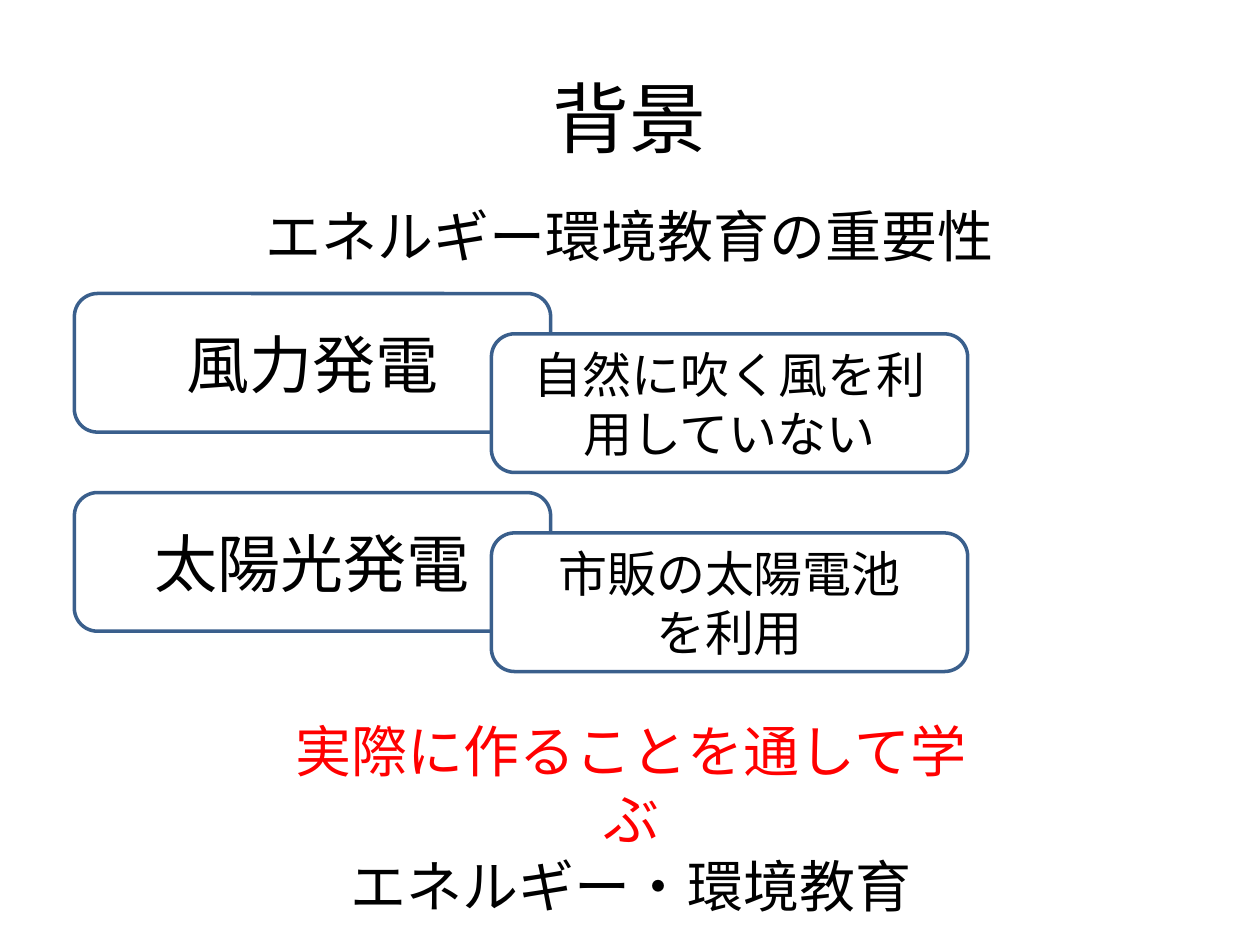
import pptx
import pptx.dml.color
import pptx.enum.shapes
import pptx.enum.text
import pptx.util

Inches = pptx.util.Inches
Pt = pptx.util.Pt
Color = pptx.dml.color.RGBColor.from_string
Align = pptx.enum.text.PP_ALIGN
Anchor = pptx.enum.text.MSO_ANCHOR
Shape = pptx.enum.shapes.MSO_SHAPE

THEME = {
    "font": "Calibri",
    "text": "000000",
    "accent": "FF0000",
    "outline": "3A5F8C",
    "card": "FFFFFF",
    "title_size": 44,
    "topic_size": 36,
    "body_size": 32,
    "detail_size": 28,
}

TEXTS = [
    ((0.5, 0.3, 9, 1.25), Anchor.MIDDLE, "title_size", [("背景", "text")]),
    ((0.5, 1.55, 9, 0.66), Anchor.TOP, "body_size",
     [("エネルギー環境教育の重要性", "text")]),
    ((2.24, 5.64, 5.54, 1.18), Anchor.TOP, "body_size",
     [("実際に作ることを通して学ぶ", "accent"), ("エネルギー・環境教育", "text")]),
]

TOPICS = [
    ("風力発電", ["自然に吹く風を利用していない"]),
    ("太陽光発電", ["市販の太陽電池", "を利用"]),
]

CARD_LEFT, CARD_TOP = 0.59, 2.33
CARD_WIDTH, CARD_HEIGHT = 3.78, 1.1
ROW_STEP = 1.58
DETAIL_SHIFT_X, DETAIL_SHIFT_Y = 3.31, 0.32


def apply_format(target, values):
    for name, value in values.items():
        setattr(target, name, value)


def write_text(shape, lines, size, anchor):
    frame = shape.text_frame
    apply_format(frame, {"word_wrap": True, "vertical_anchor": anchor})
    for index, (text, color) in enumerate(lines):
        paragraph = frame.paragraphs[0] if index == 0 else frame.add_paragraph()
        paragraph.alignment = Align.CENTER
        run = paragraph.add_run()
        run.text = text
        apply_format(run.font, {"name": THEME["font"], "size": Pt(THEME[size])})
        run.font.color.rgb = Color(THEME[color])


def add_card(slide, left, top, lines, size, filled):
    box = map(Inches, (left, top, CARD_WIDTH, CARD_HEIGHT))
    shape = slide.shapes.add_shape(Shape.ROUNDED_RECTANGLE, *box)
    shape.shadow.inherit = False
    if filled:
        shape.fill.solid()
        shape.fill.fore_color.rgb = Color(THEME["card"])
    else:
        shape.fill.background()
    shape.line.color.rgb = Color(THEME["outline"])
    shape.line.width = Pt(2)
    write_text(shape, [(line, "text") for line in lines], size, Anchor.MIDDLE)


def main():
    presentation = pptx.Presentation()
    apply_format(presentation, {"slide_width": Inches(10), "slide_height": Inches(7.5)})
    slide = presentation.slides.add_slide(presentation.slide_layouts[6])

    for box, anchor, size, lines in TEXTS:
        write_text(slide.shapes.add_textbox(*map(Inches, box)), lines, size, anchor)

    for row, (topic, details) in enumerate(TOPICS):
        top = CARD_TOP + row * ROW_STEP
        add_card(slide, CARD_LEFT, top, [topic], "topic_size", False)
        add_card(slide, CARD_LEFT + DETAIL_SHIFT_X, top + DETAIL_SHIFT_Y,
                 details, "detail_size", True)

    presentation.save("out.pptx")


if __name__ == "__main__":
    main()
